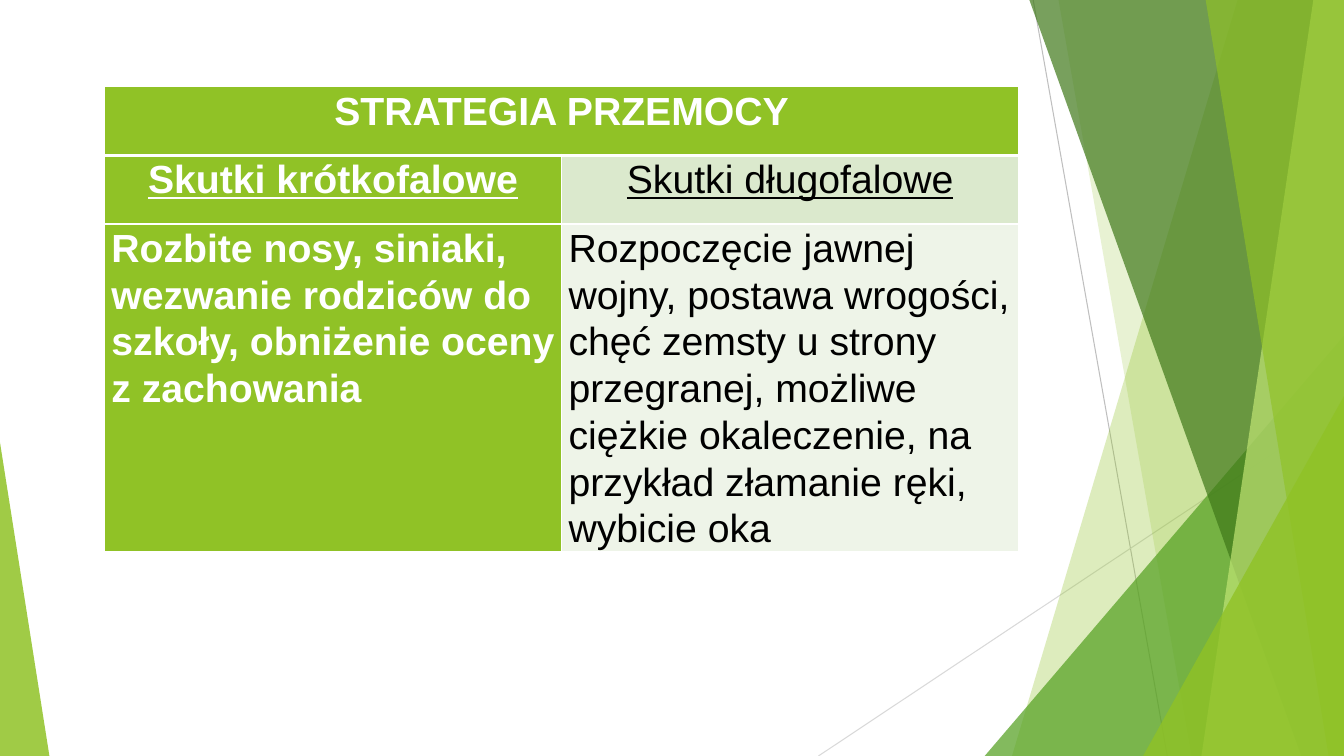
from lxml import etree
from pptx import Presentation
from pptx.dml.color import RGBColor
from pptx.enum.shapes import MSO_CONNECTOR, MSO_SHAPE
from pptx.enum.text import PP_ALIGN
from pptx.oxml.ns import qn
from pptx.util import Pt

LINE = MSO_CONNECTOR.STRAIGHT
WEDGE = MSO_SHAPE.ISOSCELES_TRIANGLE
CENTER, LEFT = PP_ALIGN.CENTER, PP_ALIGN.LEFT

WHITE = RGBColor(0xFF, 0xFF, 0xFF)
BLACK = RGBColor(0x00, 0x00, 0x00)
GREEN = RGBColor(0x90, 0xC2, 0x26)
MID = RGBColor(0x54, 0xA0, 0x21)
DARK = RGBColor(0x3F, 0x78, 0x19)
LIME = RGBColor(0xC0, 0xE4, 0x74)
PALE = RGBColor(0xDB, 0xE9, 0xCD)
MIST = RGBColor(0xEE, 0xF4, 0xE8)
GREY = RGBColor(0xBF, 0xBF, 0xBF)
SILVER = RGBColor(0xD9, 0xD9, 0xD9)

WIDE, HIGH, TOP = 960, 540, -0.6


def paint(shape, color, alpha):
    shape.shadow.inherit = False
    shape.line.fill.background()
    shape.fill.solid()
    shape.fill.fore_color.rgb = color
    tint = shape.fill._xPr.find(qn("a:solidFill"))[0]
    etree.SubElement(tint, qn("a:alpha"), val=str(alpha * 1000))


def border(cell, side, width):
    edge = etree.SubElement(cell._tc.get_or_add_tcPr(), qn("a:ln" + side),
                            w=str(Pt(width)))
    fill = etree.SubElement(edge, qn("a:solidFill"))
    etree.SubElement(fill, qn("a:srgbClr"), val=str(WHITE))


deck = Presentation()
deck.slide_width, deck.slide_height = Pt(WIDE), Pt(HIGH)
slide = deck.slides.add_slide(deck.slide_layouts[6])
shapes = slide.shapes

# Thin lines behind the bands
for x1, y1, x2, y2, color in [
    (738, 0, 833.8, HIGH, GREY),
    (WIDE, 290.2, 584.6, HIGH, SILVER),
]:
    line = shapes.add_connector(LINE, Pt(x1), Pt(y1), Pt(x2), Pt(y2))
    line.line.color.rgb = color
    line.line.width = Pt(0.75)
    etree.SubElement(line._element.spPr, qn("a:effectLst"))

# Green bands (top x, foot x) and wedges (left, top, width, peak)
for kind, spots, color, alpha in [
    ("band", (884.2, 722.9), GREEN, 30),
    ("band", (756, 851), GREEN, 20),
    ("wedge", (703.4, 239.8, 256.6, 1), MID, 72),
    ("band", (735.1, 929.5), DARK, 70),
    ("band", (938.2, 858.2), LIME, 70),
    ("band", (861.1, 949), GREEN, 65),
    ("wedge", (816.5, 283, 143.5, 1), GREEN, 80),
    ("wedge", (0, 316.1, 35.3, 0), GREEN, 85),
]:
    if kind == "band":
        head, foot = spots
        pen = shapes.build_freeform(Pt(head), Pt(TOP))
        pen.add_line_segments([(Pt(WIDE), Pt(TOP)), (Pt(WIDE), Pt(HIGH)),
                               (Pt(foot), Pt(HIGH))])
        shape = pen.convert_to_shape()
    else:
        left, top, width, peak = spots
        shape = shapes.add_shape(WEDGE, Pt(left), Pt(top), Pt(width),
                                 Pt(HIGH - top))
        shape.adjustments[0] = peak
    paint(shape, color, alpha)

# Table of effects
heights = [49, 49, 204]
table = shapes.add_table(3, 2, Pt(74.6), Pt(62), Pt(653),
                         Pt(sum(heights))).table
for row, height in zip(table.rows, heights):
    row.height = Pt(height)
for col in table.columns:
    col.width = Pt(326.5)
table.cell(0, 0).merge(table.cell(0, 1))

# Cell borders, with a thick rule under the title
for r in range(3):
    for c in range(2):
        for side in "LRTB":
            thick = (r, side) in [(0, "B"), (1, "T")]
            border(table.cell(r, c), side, 3 if thick else 1)

# Cell text: row, column, text, fill, ink, bold, underline, alignment
for r, c, text, fill, ink, bold, under, align in [
    (0, 0, "STRATEGIA PRZEMOCY", GREEN, WHITE, True, False, CENTER),
    (1, 0, "Skutki krótkofalowe", GREEN, WHITE, True, True, CENTER),
    (1, 1, "Skutki długofalowe", PALE, BLACK, False, True, CENTER),
    (2, 0, "Rozbite nosy, siniaki, wezwanie rodziców do szkoły, "
     "obniżenie oceny z zachowania", GREEN, WHITE, True, False, LEFT),
    (2, 1, "Rozpoczęcie jawnej wojny, postawa wrogości, chęć zemsty "
     "u strony przegranej, możliwe ciężkie okaleczenie, na przykład "
     "złamanie ręki, wybicie oka", MIST, BLACK, False, False, LEFT),
]:
    cell = table.cell(r, c)
    cell.fill.solid()
    cell.fill.fore_color.rgb = fill
    cell.margin_left = cell.margin_right = Pt(5)
    cell.margin_top = cell.margin_bottom = Pt(0)
    para = cell.text_frame.paragraphs[0]
    para.alignment = align
    para.line_spacing = 1.07
    run = para.add_run()
    run.text = text
    font = run.font
    font.name, font.size = "Arial", Pt(28)
    font.bold, font.underline = bold, under
    font.color.rgb = ink

deck.save("out.pptx")
